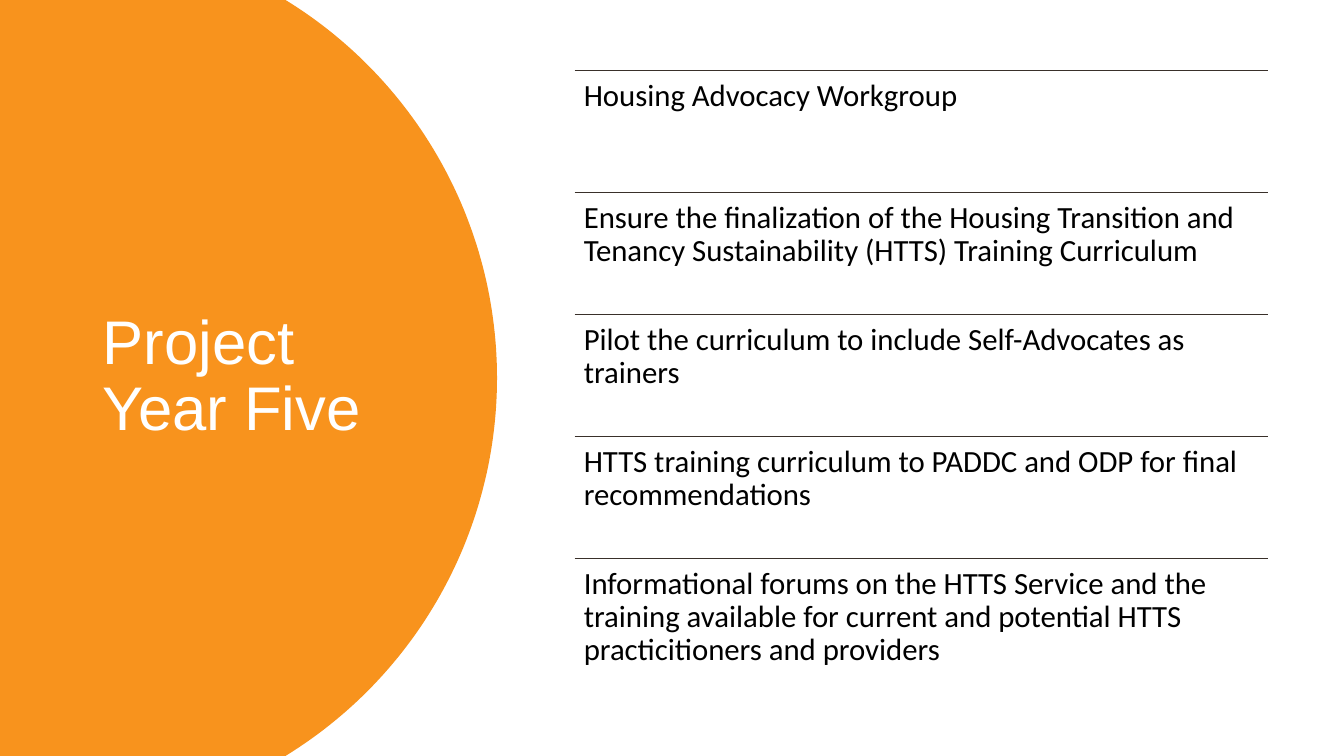
from math import asin, cos, sin

from pptx import Presentation
from pptx.dml.color import RGBColor
from pptx.enum.shapes import MSO_CONNECTOR
from pptx.enum.text import MSO_ANCHOR
from pptx.oxml.ns import qn
from pptx.util import Inches, Pt
from lxml import etree

STRAIGHT = MSO_CONNECTOR.STRAIGHT
TOP, MIDDLE = MSO_ANCHOR.TOP, MSO_ANCHOR.MIDDLE

GOALS = [
    "Housing Advocacy Workgroup",
    "Ensure the finalization of the Housing Transition and Tenancy "
    "Sustainability (HTTS) Training Curriculum",
    "Pilot the curriculum to include Self-Advocates as trainers",
    "HTTS training curriculum to PADDC and ODP for final recommendations",
    "Informational forums on the HTTS Service and the training available for "
    "current and potential HTTS practicitioners and providers",
]
LIST_LEFT, LIST_TOP, LIST_WIDTH, ROW_HEIGHT = 5.7, 0.7, 6.88, 1.21
CIRCLE_X, CIRCLE_Y, RADIUS = 0.53, 3.75, 4.4
ARC_STEPS = 120


def color(value):
    return RGBColor.from_string(value)


def add_text(box, text, anchor, inset, font):
    """Add a wrapped text box; box is left, top, width, height in inches."""
    tf = slide.shapes.add_textbox(*map(Inches, box)).text_frame
    frame = {"word_wrap": True, "vertical_anchor": anchor,
             "margin_left": Inches(inset), "margin_right": Inches(inset),
             "margin_top": Inches(0.09), "margin_bottom": Inches(0.09)}
    for name, value in frame.items():
        setattr(tf, name, value)
    p = tf.paragraphs[0]
    p.line_spacing = 0.9
    r = p.add_run()
    r.text = text
    r.font.name, r.font.size = font["name"], Pt(font["size"])
    r.font.color.rgb = color(font["color"])


prs = Presentation()
prs.slide_width, prs.slide_height = Inches(13.33), Inches(7.5)
slide = prs.slides.add_slide(prs.slide_layouts[6])

# Orange panel: a circle cut off by the slide edges
half_angle = asin(CIRCLE_Y / RADIUS)
angles = [half_angle * (2 * i / ARC_STEPS - 1) for i in range(ARC_STEPS + 1)]
arc = [(Inches(CIRCLE_X + RADIUS * cos(a)), Inches(CIRCLE_Y + RADIUS * sin(a)))
       for a in angles]
builder = slide.shapes.build_freeform(0, 0)
builder.add_line_segments(arc + [(0, Inches(7.5))], close=True)
panel = builder.convert_to_shape()
panel.shadow.inherit = False
panel.fill.solid()
panel.fill.fore_color.rgb = color("F8931D")
panel.line.fill.background()

add_text((0.92, 0.7, 3.23, 6.09), "Project Year Five", MIDDLE, 0.1,
         {"name": "Arial", "size": 44, "color": "FFFFFF"})

# Goals, each under its own rule
for i, goal in enumerate(GOALS):
    y = LIST_TOP + i * ROW_HEIGHT
    rule = slide.shapes.add_connector(
        STRAIGHT, Inches(LIST_LEFT), Inches(y),
        Inches(LIST_LEFT + LIST_WIDTH), Inches(y))
    rule.line.color.rgb = color("39302A")
    rule.line.width = Pt(1)
    etree.SubElement(rule._element.spPr, qn("a:effectLst"))
    add_text((LIST_LEFT, y, LIST_WIDTH, ROW_HEIGHT), goal, TOP, 0.09,
             {"name": "Calibri", "size": 22, "color": "000000"})

prs.save("out.pptx")
